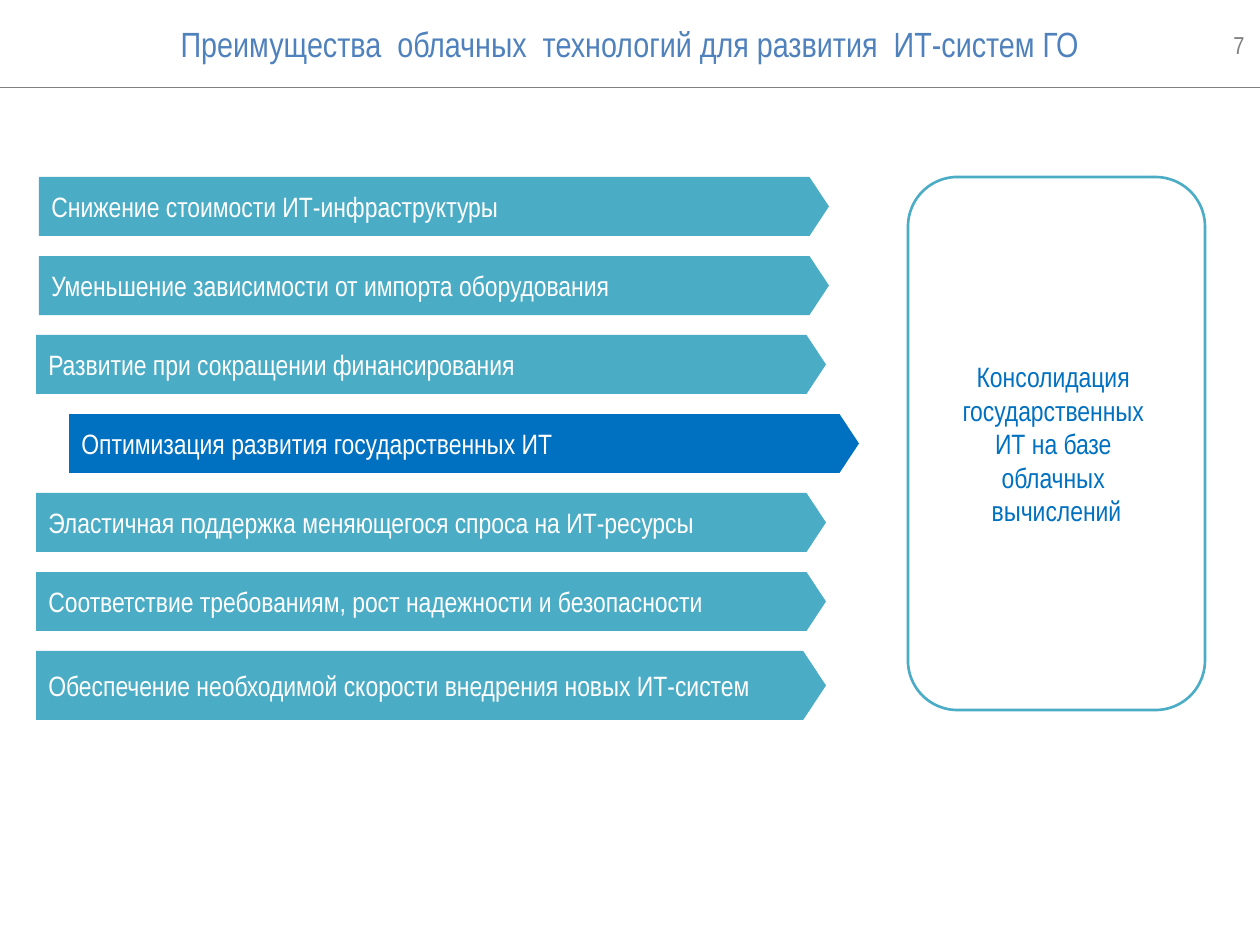
from lxml.etree import SubElement
from pptx import Presentation
from pptx.dml.color import RGBColor
from pptx.enum.shapes import MSO_CONNECTOR, MSO_SHAPE
from pptx.enum.text import MSO_ANCHOR as ANCHOR, MSO_AUTO_SIZE, PP_ALIGN as ALIGN
from pptx.oxml.ns import qn
from pptx.util import Emu, Pt

TITLE = "Преимущества  облачных  технологий для развития  ИТ-систем ГО"
BENEFITS = [
    ("Снижение стоимости ИТ-инфраструктуры", 39),
    ("Уменьшение зависимости от импорта оборудования", 39),
    ("Развитие при сокращении финансирования", 36),
    ("Оптимизация развития государственных ИТ", 69),
    ("Эластичная поддержка меняющегося спроса на ИТ-ресурсы", 36),
    ("Соответствие требованиям, рост надежности и безопасности", 36),
    ("Обеспечение необходимой скорости внедрения новых ИТ-систем", 36),
]
KEY_BENEFIT = 3
RESULT = ["Консолидация ", "государственных ", "ИТ на базе ", "облачных ", "вычислений"]
PAGE = "7"

TEAL = RGBColor(0x4B, 0xAC, 0xC6)
BLUE = RGBColor(0x00, 0x70, 0xC0)
TITLE_BLUE = RGBColor(0x4F, 0x81, 0xBD)
GRAY = RGBColor(0x80, 0x80, 0x80)
WHITE = RGBColor(0xFF, 0xFF, 0xFF)

SLIDE_W, SLIDE_H = 1260, 945
RULE_Y = 87
BAR_TOP, BAR_PITCH, BAR_W, BAR_H, LAST_H = 177, 79, 790, 59, 69


def px(n):
    return Emu(round(n * 914400 / 126))


def box(*lengths):
    return [px(n) for n in lengths]


def write(sp, lines, size, color, align, anchor, wrap=True):
    tf = sp.text_frame
    frame = {"word_wrap": wrap, "auto_size": MSO_AUTO_SIZE.NONE, "vertical_anchor": anchor}
    for name, value in frame.items():
        setattr(tf, name, value)
    tf.text = "\n".join(lines)
    for p in tf.paragraphs:
        p.alignment = align
        for name, value in {"name": "Arial Narrow", "size": Pt(size)}.items():
            setattr(p.runs[0].font, name, value)
        p.runs[0].font.color.rgb = color


prs = Presentation()
prs.slide_width, prs.slide_height = box(SLIDE_W, SLIDE_H)
slide = prs.slides.add_slide(prs.slide_layouts[5])
shapes = slide.shapes

title = shapes.title
title.left, title.top, title.width, title.height = box(15, 16, 1230, 66)
write(title, [TITLE], 20, TITLE_BLUE, ALIGN.CENTER, ANCHOR.TOP)

number = shapes.add_textbox(*box(1155, 20, 102, 50))
write(number, [PAGE], 14, GRAY, ALIGN.RIGHT, ANCHOR.MIDDLE)

rule = shapes.add_connector(MSO_CONNECTOR.STRAIGHT, *box(0, RULE_Y, SLIDE_W, RULE_Y))
rule.line.color.rgb = GRAY
rule.line.width = Pt(0.5)
SubElement(rule._element.spPr, qn("a:effectLst"))

for i, (text, left) in enumerate(BENEFITS):
    height = LAST_H if i == len(BENEFITS) - 1 else BAR_H
    bar = shapes.add_shape(MSO_SHAPE.PENTAGON, *box(left, BAR_TOP + i * BAR_PITCH, BAR_W, height))
    bar.adjustments[0] = 0.33
    bar.shadow.inherit = False
    bar.fill.solid()
    bar.fill.fore_color.rgb = BLUE if i == KEY_BENEFIT else TEAL
    bar.line.fill.background()
    write(bar, [text], 16, WHITE, ALIGN.LEFT, ANCHOR.MIDDLE)

result = shapes.add_shape(MSO_SHAPE.ROUNDED_RECTANGLE, *box(908, BAR_TOP, 297, 533))
result.shadow.inherit = False
result.fill.background()
result.line.color.rgb = TEAL
result.line.width = Pt(1.5)
write(result, RESULT, 16, BLUE, ALIGN.CENTER, ANCHOR.MIDDLE, wrap=False)

prs.save("out.pptx")
